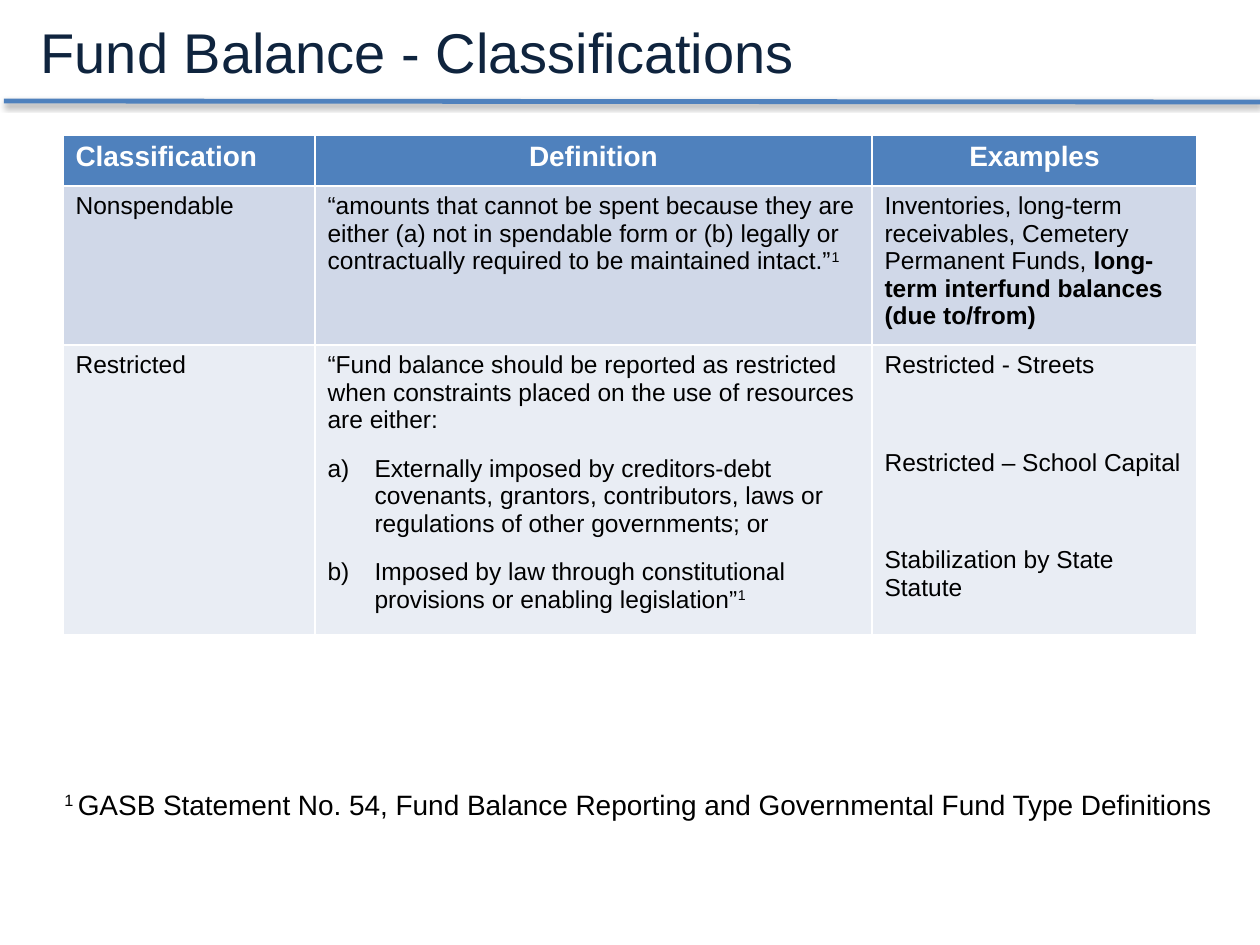
from dataclasses import dataclass

from lxml.etree import SubElement
from pptx import Presentation
from pptx.dml.color import RGBColor
from pptx.enum.shapes import MSO_CONNECTOR
from pptx.enum.text import MSO_ANCHOR, MSO_AUTO_SIZE, PP_ALIGN
from pptx.oxml.ns import qn
from pptx.util import Emu, Pt

PX_PER_INCH = 126


@dataclass(frozen=True)
class Theme:
    font: str = "Arial"
    accent: str = "4F81BD"
    title: str = "0F243E"
    text: str = "000000"
    white: str = "FFFFFF"
    bands: tuple[str, ...] = ("D0D8E8", "E9EDF4")
    title_size: int = 32
    large: int = 16
    small: int = 14


@dataclass(frozen=True)
class Run:
    text: str
    bold: bool = False
    superscript: bool = False


@dataclass(frozen=True)
class Para:
    runs: tuple[Run, ...]
    align: PP_ALIGN = PP_ALIGN.LEFT
    before: int = 0
    lettered: bool = False


THEME = Theme()
NOTE_MARK = Run("1", superscript=True)


def px(n: int) -> Emu:
    return Emu(round(n * 914400 / PX_PER_INCH))


def rgb(color: str) -> RGBColor:
    return RGBColor.from_string(color)


def plain(text: str, **fmt) -> Para:
    return Para((Run(text),), **fmt)


def header(text: str, align: PP_ALIGN) -> list[Para]:
    return [Para((Run(text, bold=True),), align)]


def place(sp, left: int, top: int, width: int, height: int) -> None:
    box = {"left": left, "top": top, "width": width, "height": height}
    for name, value in box.items():
        setattr(sp, name, px(value))


def write(tf, paras: list[Para], size: int, color: str) -> None:
    for i, para in enumerate(paras):
        p = tf.paragraphs[0] if i == 0 else tf.add_paragraph()
        for name, value in {"alignment": para.align, "space_before": Pt(para.before)}.items():
            setattr(p, name, value)
        if para.lettered:
            pPr = p._p.get_or_add_pPr()
            pPr.set("marL", str(px(47)))
            pPr.set("indent", str(-px(47)))
            SubElement(pPr, qn("a:buAutoNum"), type="alphaLcParenR")
        for run in para.runs:
            r = p.add_run()
            r.text = run.text
            fmt = {"name": THEME.font, "size": Pt(size), "bold": run.bold}
            for name, value in fmt.items():
                setattr(r.font, name, value)
            r.font.color.rgb = rgb(color)
            if run.superscript:
                r._r.get_or_add_rPr().set("baseline", "30000")


def add_rule(slide) -> None:
    line = slide.shapes.add_connector(
        MSO_CONNECTOR.STRAIGHT, px(4), px(101), px(1260), px(102))
    line.line.color.rgb = rgb(THEME.accent)
    line.line.width = Pt(2.75)
    effects = SubElement(line._element.spPr, qn("a:effectLst"))
    shadow = SubElement(effects, qn("a:outerShdw"), blurRad=str(Pt(3.1)),
                        dist=str(Pt(1.6)), dir="5400000", rotWithShape="0")
    black = SubElement(shadow, qn("a:srgbClr"), val=THEME.text)
    SubElement(black, qn("a:alpha"), val="38000")


def add_classifications(slide, rows: list[list[list[Para]]],
                        widths: list[int], heights: list[int]) -> None:
    table = slide.shapes.add_table(
        len(rows), len(widths), px(63), px(135), px(sum(widths)), px(sum(heights))).table
    for column, width in zip(table.columns, widths):
        column.width = px(width)
    for i, (row, height) in enumerate(zip(rows, heights)):
        table.rows[i].height = px(height)
        is_header = i == 0
        fill = THEME.accent if is_header else THEME.bands[(i - 1) % 2]
        size = THEME.large if is_header else THEME.small
        color = THEME.white if is_header else THEME.text
        for j, paras in enumerate(row):
            cell = table.cell(i, j)
            cell.fill.solid()
            cell.fill.fore_color.rgb = rgb(fill)
            write(cell.text_frame, paras, size, color)


ROWS = [
    [header("Classification", PP_ALIGN.LEFT),
     header("Definition", PP_ALIGN.CENTER),
     header("Examples", PP_ALIGN.CENTER)],
    [[plain("Nonspendable")],
     [Para((Run("“amounts that cannot be spent because they are either (a) not in "
                "spendable form or (b) legally or contractually required to be "
                "maintained intact.”"), NOTE_MARK))],
     [Para((Run("Inventories, long-term receivables, Cemetery Permanent Funds,"),
            Run(" long-term interfund balances (due to/from)", bold=True)))]],
    [[plain("Restricted")],
     [plain("“Fund balance should be reported as restricted when constraints "
            "placed on the use of resources are either:"),
      plain("Externally imposed by creditors-debt covenants, grantors, contributors, "
            "laws or regulations of other governments; or", before=12, lettered=True),
      Para((Run("Imposed by law through constitutional provisions or enabling "
                "legislation”"), NOTE_MARK), before=12, lettered=True)],
     [plain("Restricted - Streets"),
      plain("Restricted – School Capital", before=40),
      plain("Stabilization by State Statute", before=40)]],
]


def main() -> None:
    prs = Presentation()
    prs.slide_width, prs.slide_height = px(1260), px(945)
    slide = prs.slides.add_slide(prs.slide_layouts[5])

    # Title and the rule under it
    add_rule(slide)
    title = slide.shapes.title
    place(title, 28, 11, 786, 81)
    frame = {"word_wrap": False, "auto_size": MSO_AUTO_SIZE.NONE,
             "vertical_anchor": MSO_ANCHOR.TOP}
    for name, value in frame.items():
        setattr(title.text_frame, name, value)
    write(title.text_frame, [plain("Fund Balance - Classifications")],
          THEME.title_size, THEME.title)

    # Classification table
    add_classifications(slide, ROWS, [252, 557, 325], [51, 159, 290])

    # Footnote
    note = slide.shapes.add_textbox(px(52), px(781), px(1207), px(47))
    note.text_frame.word_wrap = True
    citation = Para((Run("1 ", superscript=True),
                     Run("GASB Statement No. 54, Fund Balance Reporting and "
                         "Governmental Fund Type Definitions")))
    write(note.text_frame, [citation], THEME.large, THEME.text)

    prs.save("out.pptx")


if __name__ == "__main__":
    main()
